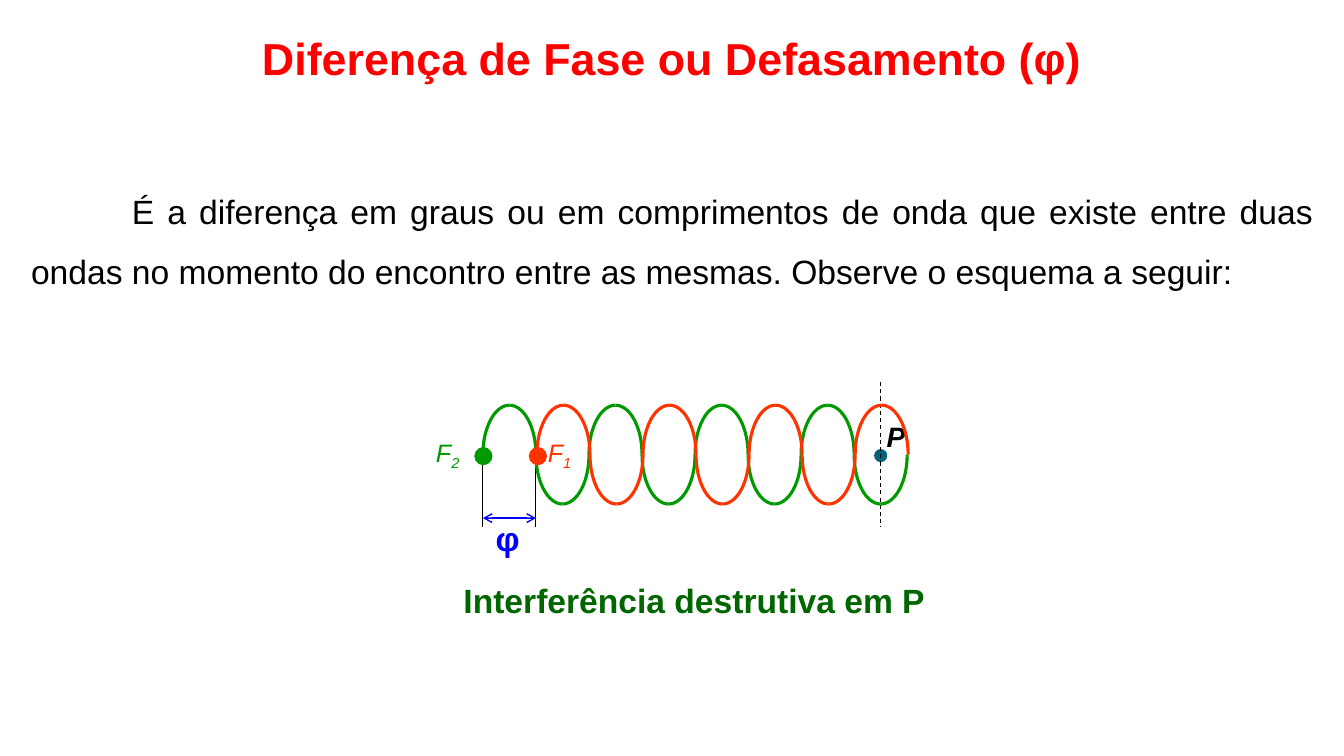
"""Builds a slide on phase difference with two waves meeting out of phase at P."""
from math import cos, pi, sin

from lxml.etree import SubElement
from pptx import Presentation
from pptx.dml.color import RGBColor
from pptx.enum.dml import MSO_LINE
from pptx.enum.shapes import MSO_CONNECTOR, MSO_SHAPE
from pptx.enum.text import MSO_ANCHOR, PP_ALIGN
from pptx.oxml.ns import qn
from pptx.util import Inches, Pt

TITLE = "Diferença de Fase ou Defasamento (φ)"
DEFINITION = ("É a diferença em graus ou em comprimentos de onda que existe entre duas ondas "
              "no momento do encontro entre as mesmas. Observe o esquema a seguir:")
CAPTION = "Interferência destrutiva em P"
GREEN, ORANGE, BLUE, BLACK = "009900", "FF3300", "0000FF", "000000"

AXIS = 4.51
HALF_WAVE = 0.526
AMPLITUDE = 0.49
SOURCE_X = 4.79
SHIFTED_X = SOURCE_X + HALF_WAVE
MEETING_X = SOURCE_X + 7.5 * HALF_WAVE
MARK_BOTTOM = 5.23
ARC_STEPS = 16

WAVES = [
    {"start": SOURCE_X, "lobes": 8, "color": GREEN, "dot": 4.795, "label": "2", "label_left": 4.15},
    {"start": SHIFTED_X + 0.01, "lobes": 7, "color": ORANGE, "dot": 5.335, "label": "1",
     "label_left": 5.26},
]


def rgb(value):
    return RGBColor.from_string(value)


def add_text(shapes, place, pieces, size, color, bold=False, italic=False,
             align=PP_ALIGN.CENTER, inset=True):
    box = shapes.add_textbox(*[Inches(length) for length in place])
    frame = box.text_frame
    frame.word_wrap = True
    if not inset:
        frame.margin_left = frame.margin_right = frame.margin_top = frame.margin_bottom = 0
    para = frame.paragraphs[0]
    para.alignment = align
    font = para.font
    font.name, font.size, font.bold, font.italic = "Arial", Pt(size), bold, italic
    font.color.rgb = rgb(color)
    for piece in pieces:
        para.add_run().text = piece
    return box


def add_line(shapes, start, end, color=BLACK, width=0.75, dash=None, arrows=False):
    ends = [Inches(length) for length in (*start, *end)]
    line = shapes.add_connector(MSO_CONNECTOR.STRAIGHT, *ends)
    line.line.color.rgb = rgb(color)
    line.line.width = Pt(width)
    if dash:
        line.line.dash_style = dash
    properties = line._element.spPr
    if arrows:
        for tag in ("a:headEnd", "a:tailEnd"):
            SubElement(properties.find(qn("a:ln")), qn(tag), type="arrow")
    SubElement(properties, qn("a:effectLst"))


def add_dot(shapes, x, y, diameter, color):
    corner = (x - diameter / 2, y - diameter / 2)
    dot = shapes.add_shape(MSO_SHAPE.OVAL, *[Inches(v) for v in (*corner, diameter, diameter)])
    dot.shadow.inherit = False
    dot.fill.solid()
    dot.fill.fore_color.rgb = dot.line.color.rgb = rgb(color)
    dot.line.width = Pt(0.75)


def add_quarter(shapes, crest_x, side, direction, color):
    angles = [pi / 2 * step / ARC_STEPS for step in range(ARC_STEPS + 1)]
    points = [(Inches(crest_x + side * HALF_WAVE / 2 * sin(angle)),
               Inches(AXIS - direction * AMPLITUDE * cos(angle))) for angle in angles]
    builder = shapes.build_freeform(*points[0])
    builder.add_line_segments(points[1:], close=False)
    arc = builder.convert_to_shape()
    arc.shadow.inherit = False
    arc.fill.background()
    arc.line.color.rgb = rgb(color)
    arc.line.width = Pt(2.25)


def add_wave(shapes, wave):
    for lobe in range(wave["lobes"]):
        crest_x = wave["start"] + (lobe + 0.5) * HALF_WAVE
        for side in (1, -1):
            add_quarter(shapes, crest_x, side, (-1) ** lobe, wave["color"])
    add_dot(shapes, wave["dot"], 4.525, 0.17, wave["color"])
    label = add_text(shapes, (wave["label_left"], 4.29, 0.58, 0.4), ("F", wave["label"]),
                     18, wave["color"], italic=True)
    subscript = label.text_frame.paragraphs[0].runs[1]
    subscript._r.get_or_add_rPr().set("baseline", "-25000")


def main():
    deck = Presentation()
    deck.slide_width, deck.slide_height = Inches(13.33), Inches(7.5)
    page = deck.slides.add_slide(deck.slide_layouts[6])
    shapes = page.shapes

    title = add_text(shapes, (0, 0.2, 13.33, 0.74), [TITLE], 32, "FF0000", bold=True)
    title.text_frame.vertical_anchor = MSO_ANCHOR.MIDDLE

    meeting = shapes.add_group_shape().shapes
    add_dot(meeting, MEETING_X, 4.52, 0.12, "04617B")
    add_text(meeting, (8.74, 4.16, 0.29, 0.33), ["P"], 20, BLACK, bold=True, italic=True,
             inset=False)
    add_line(meeting, (MEETING_X, 3.79), (MEETING_X, MARK_BOTTOM), dash=MSO_LINE.DASH)

    add_text(shapes, (4.76, 5.14, 0.55, 0.4), ["φ"], 24, BLUE, bold=True, inset=False)
    marks = shapes.add_group_shape().shapes
    for x in (SOURCE_X, SHIFTED_X):
        add_line(marks, (x, AXIS), (x, MARK_BOTTOM))
    add_line(shapes, (SOURCE_X, 5.14), (SHIFTED_X, 5.14), BLUE, 1, arrows=True)

    for wave in WAVES:
        add_wave(shapes.add_group_shape().shapes, wave)

    add_text(shapes, (4.3, 5.7, 5.17, 0.5), [CAPTION], 24, "006600", bold=True)
    definition = add_text(shapes, (0.21, 1.64, 12.91, 1.24), [DEFINITION], 24, BLACK,
                          align=PP_ALIGN.JUSTIFY)
    para = definition.text_frame.paragraphs[0]
    para.line_spacing = 1.5
    para._p.get_or_add_pPr().set("indent", str(Inches(1)))

    deck.save("out.pptx")


if __name__ == "__main__":
    main()
